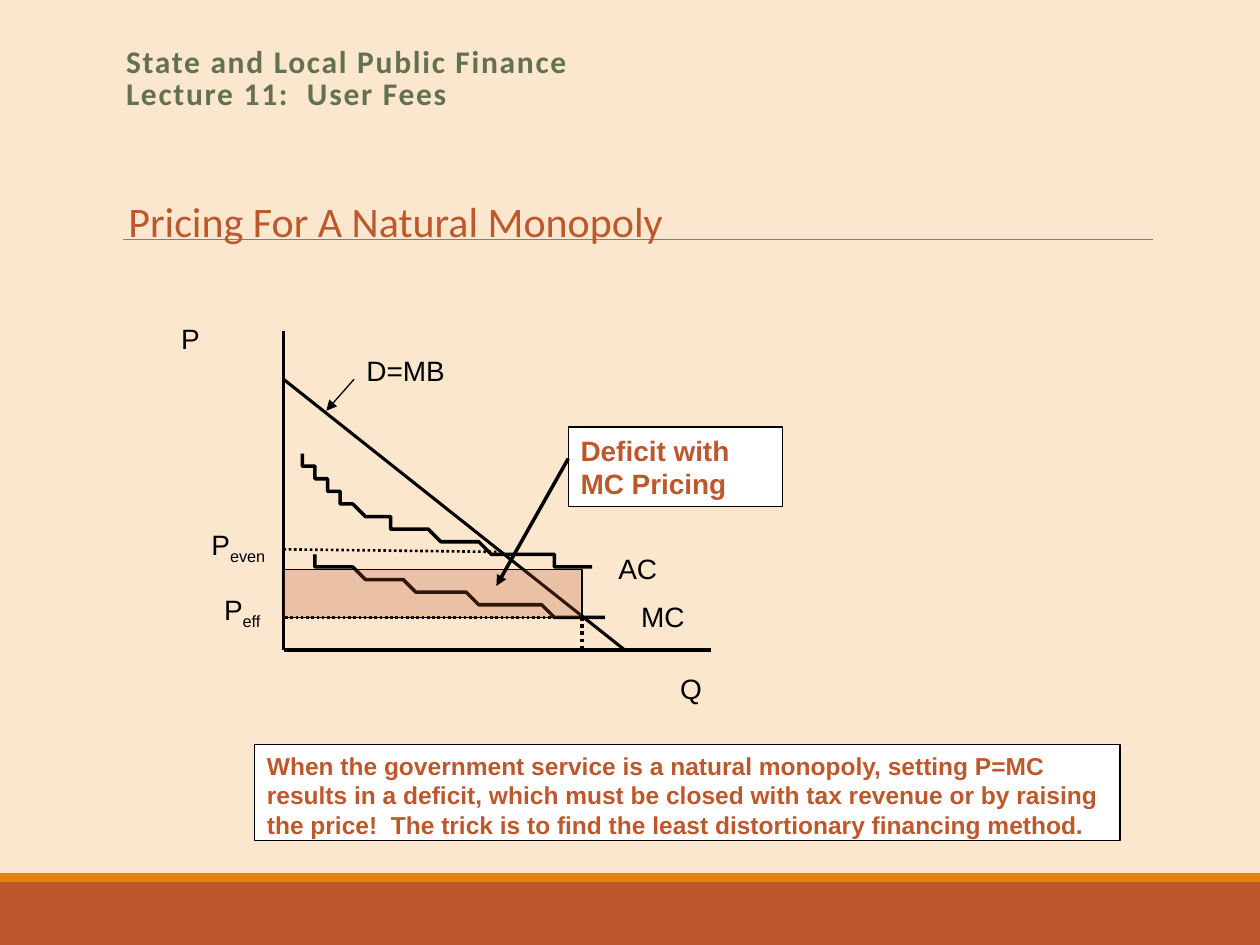
from lxml import etree
from pptx import Presentation, util as u
from pptx.dml.color import RGBColor
from pptx.enum import dml, shapes, text
from pptx.oxml import ns

# Grid: 100 columns by 75 rows of square cells
CELL = u.Inches(0.1)
COLUMNS, ROWS = 100, 75
colour = RGBColor.from_string
BLACK, WHITE, RUST, ORANGE = "000000", "FFFFFF", "BD582C", "E48312"

deck = Presentation()
deck.slide_width, deck.slide_height = COLUMNS * CELL, ROWS * CELL
page = deck.slides.add_slide(deck.slide_layouts[5])
page.background.fill.solid()
page.background.fill.fore_color.rgb = colour("FBE6CE")


def add_line(start, end, width, hue=BLACK, dotted=False, arrow=False):
    ends = [round(n * CELL) for n in (*start, *end)]
    line = page.shapes.add_connector(shapes.MSO_CONNECTOR.STRAIGHT, *ends)
    line.line.width = u.Pt(width)
    line.line.color.rgb = colour(hue)
    if dotted:
        line.line.dash_style = dml.MSO_LINE.ROUND_DOT
    if arrow:
        etree.SubElement(line.line._get_or_add_ln(), ns.qn("a:tailEnd"), type="triangle")
    etree.SubElement(line._element.spPr, ns.qn("a:effectLst"))


def add_box(left, top, width, height, fill=None, outline=None, words="",
            size=16, hue=BLACK, bold=False, font="Arial", wrap=True):
    area = [round(n * CELL) for n in (left, top, width, height)]
    if fill:
        box = page.shapes.add_shape(shapes.MSO_SHAPE.RECTANGLE, *area)
        box.shadow.inherit = False
        box.fill.solid()
        box.fill.fore_color.rgb = colour(fill)
        if outline:
            box.line.color.rgb = colour(outline)
            box.line.width = u.Pt(0.75)
        else:
            box.line.fill.background()
    else:
        box = page.shapes.add_textbox(*area)
    if words:
        frame = box.text_frame
        frame.word_wrap = wrap
        frame.vertical_anchor = text.MSO_ANCHOR.TOP
        para = frame.paragraphs[0]
        para.alignment = text.PP_ALIGN.LEFT
        para.font.name, para.font.size, para.font.bold = font, u.Pt(size), bold
        para.font.color.rgb = colour(hue)
        # An underscore marks the start of a subscript
        base, _, subscript = words.partition("_")
        para.add_run().text = base
        if subscript:
            span = para.add_run()
            span.text = subscript
            span.font._element.set("baseline", "-25000")
    return box


# Footer bands and heading rule
add_box(0, 70, COLUMNS, 5, RUST)
add_box(0, 69.3, COLUMNS, 0.7, ORANGE)
add_line((9.8, 19), (91.5, 19), 0.5, "808080")

# Title
title = page.shapes.title
title.left, title.top, title.width, title.height = [round(n * CELL) for n in (9, 3.3, 82.5, 6.5)]
title.text_frame.text = "State and Local Public Finance\vLecture 11:  User Fees"
title.text_frame.vertical_anchor = text.MSO_ANCHOR.TOP
title.text_frame.auto_size = text.MSO_AUTO_SIZE.NONE
heading = title.text_frame.paragraphs[0]
heading.alignment = text.PP_ALIGN.LEFT
heading.line_spacing = 0.85
heading.font.name, heading.font.size, heading.font.bold = "Calibri", u.Pt(18), True
heading.font.color.rgb = colour("637052")
for span in heading.runs:
    span.font._element.set("spc", "100")

# Subtitle
add_box(9.2, 15, 44.8, 5, words="Pricing For A Natural Monopoly",
        size=24, hue=RUST, font="Calibri", wrap=False)

# Axes and demand
origin_x, origin_y = 22.5, 51.6
efficient_x, efficient_y, average_y = 46.2, 49, 45.2
add_line((origin_x, 26.3), (origin_x, origin_y), 2)
add_line((origin_x, origin_y), (56.4, origin_y), 2)
add_line((origin_x, 30.1), (49.6, origin_y), 1.75)

# Axis and curve labels
for words, left, top, width, height in (
        ("P", 13.4, 25, 3.4, 5.1), ("Q", 53, 52.8, 3.4, 5.1),
        ("AC", 48.1, 43.3, 5.7, 3.8), ("MC", 49.9, 47.1, 5.7, 3.8),
        ("D=MB", 28.1, 27.6, 11.3, 3.8),
        ("P_eff", 16.8, 46.5, 9.1, 3.8), ("P_even", 15.8, 41.4, 9.1, 3.8)):
    add_box(left, top, width, height, words=words)

# Cost curves: chained cubic Béziers, three points for each further segment
average_cost = [(23.6, 36.4), (25.5, 38.1), (27.4, 39.7), (29.5, 40.8), (31.7, 41.9),
                (33.7, 42.3), (36.7, 43), (39.6, 43.8), (43.5, 44.5), (47.4, 45.2)]
marginal_cost = [(24.7, 44.3), (27.3, 45.1), (29.8, 45.9), (33.8, 46.8),
                 (37.7, 47.6), (43.1, 48.5), (48.5, 49.3)]
STEPS = 12
for knots in (average_cost, marginal_cost):
    points = []
    for first in range(0, len(knots) - 1, 3):
        for step in range(1, STEPS + 1):
            t = step / STEPS
            weights = ((1 - t) ** 3, 3 * t * (1 - t) ** 2, 3 * t * t * (1 - t), t ** 3)
            points.append([sum(w * knot[axis] for w, knot in zip(weights, knots[first:first + 4]))
                           for axis in (0, 1)])
    pen = page.shapes.build_freeform(*knots[0], scale=CELL)
    pen.add_line_segments(points, close=False)
    curve = pen.convert_to_shape()
    curve.shadow.inherit = False
    curve.fill.background()
    curve.line.color.rgb = colour(BLACK)
    curve.line.width = u.Pt(2)

# Price guides and demand pointer
add_line((efficient_x, efficient_y), (origin_x, efficient_y), 1.5, dotted=True)
add_line((39.4, 43.8), (origin_x, 43.6), 1.5, dotted=True)
add_line((28.1, 30.1), (25.9, 32.6), 0.75, arrow=True)

# Deficit area, see-through
deficit = add_box(origin_x, average_y, efficient_x - origin_x, efficient_y - average_y, RUST, BLACK)
tint = deficit._element.spPr.find(ns.qn("a:solidFill"))[0]
etree.SubElement(tint, ns.qn("a:alpha"), val="26000")

# Callouts
add_box(45.1, 33.9, 17, 6.3, WHITE, BLACK, "Deficit with MC Pricing", 16, RUST, True)
add_line((45.1, 36.4), (39.4, 46.5), 2, arrow=True)
add_line((efficient_x, efficient_y), (efficient_x, origin_y), 2, dotted=True)
add_box(20.2, 59.1, 68.7, 7.6, WHITE, BLACK,
        "When the government service is a natural monopoly, setting P=MC results in a deficit, "
        "which must be closed with tax revenue or by raising the price!  The trick is to find "
        "the least distortionary financing method.", 14, RUST, True)

deck.save("out.pptx")
